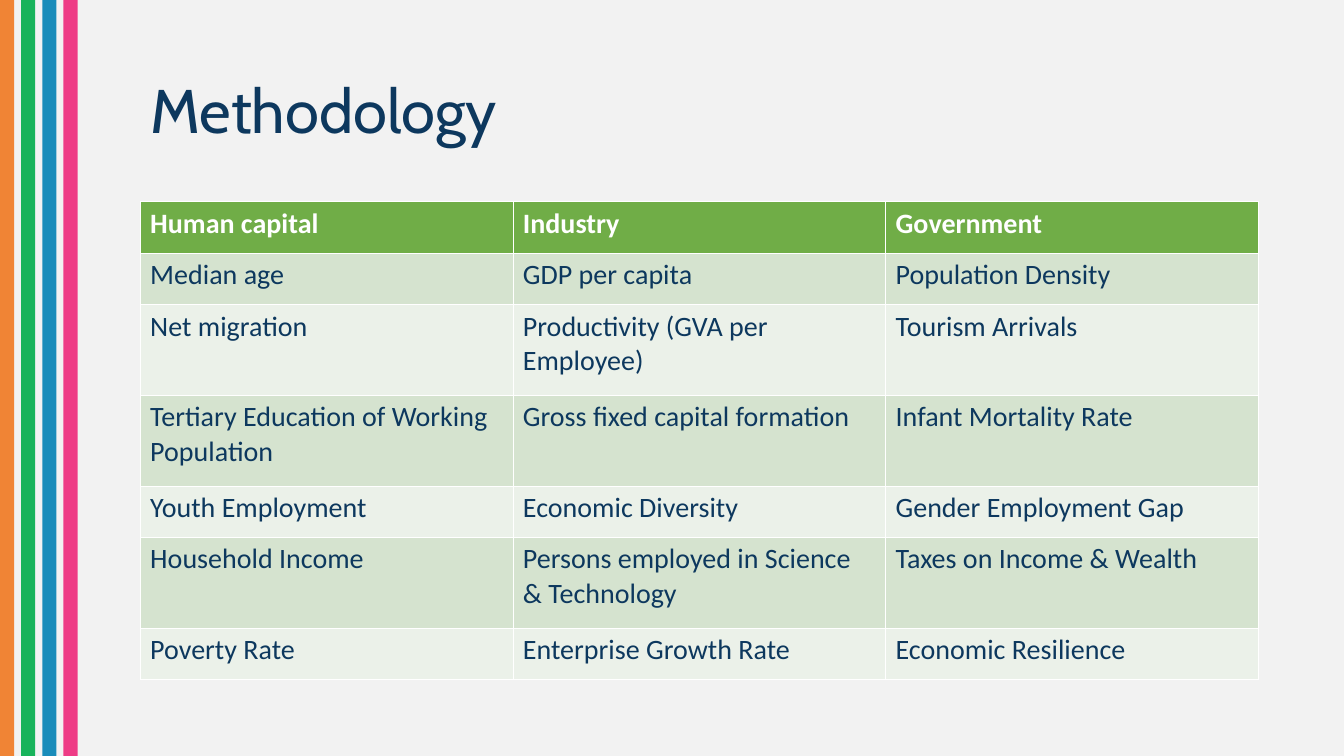
from dataclasses import dataclass

from lxml.etree import SubElement
from pptx import Presentation
from pptx.dml.color import RGBColor
from pptx.enum.shapes import MSO_SHAPE
from pptx.enum.text import MSO_ANCHOR, PP_ALIGN
from pptx.oxml.ns import qn
from pptx.util import Inches, Pt


@dataclass(frozen=True)
class Theme:
    background: str = "F2F2F2"
    ink: str = "0D385E"
    white: str = "FFFFFF"
    header: str = "70AD47"
    bands: tuple = ("D5E3CF", "EBF1E9")
    stripes: tuple = ("F07921", "01AD4B", "0281B4", "EE297B")
    stripe_opacity: int = 90
    title_font: str = "Cabin"
    body_font: str = "Calibri"
    title_size: int = 44
    body_size: int = 20
    border_width: float = 0.5


THEME = Theme()
SLIDE_WIDTH, SLIDE_HEIGHT = 13.33, 7.5
STRIPE_WIDTH, STRIPE_PITCH = 0.14, 0.21
ROW_HEIGHTS = (0.51, 0.51, 0.9, 0.9, 0.51, 0.9, 0.51)
INDICATORS = (
    ("Human capital", "Industry", "Government"),
    ("Median age", "GDP per capita", "Population Density"),
    ("Net migration", "Productivity (GVA per Employee)", "Tourism Arrivals"),
    ("Tertiary Education of Working Population", "Gross fixed capital formation", "Infant Mortality Rate"),
    ("Youth Employment", "Economic Diversity", "Gender Employment Gap"),
    ("Household Income", "Persons employed in Science & Technology", "Taxes on Income & Wealth"),
    ("Poverty Rate", "Enterprise Growth Rate", "Economic Resilience"),
)


def set_attributes(target, values):
    for name, value in values.items():
        setattr(target, name, value)


def set_fill(fill, color):
    fill.solid()
    fill.fore_color.rgb = RGBColor.from_string(color)


def format_font(font, name, size, color, bold=False):
    set_attributes(font, {"name": name, "size": Pt(size), "bold": bold})
    font.color.rgb = RGBColor.from_string(color)


def add_stripes(slide, left, top, height):
    for index, color in enumerate(THEME.stripes):
        stripe = slide.shapes.add_shape(
            MSO_SHAPE.RECTANGLE,
            Inches(left + index * STRIPE_PITCH),
            Inches(top),
            Inches(STRIPE_WIDTH),
            Inches(height),
        )
        stripe.shadow.inherit = False
        set_fill(stripe.fill, color)
        stripe.line.fill.background()
        color_element = stripe.fill._xPr.find(qn("a:solidFill"))[0]
        SubElement(color_element, qn("a:alpha"), val=str(THEME.stripe_opacity * 1000))


def place_title(slide, text, left, top, width, height):
    title = slide.shapes.title
    set_attributes(title, {
        "left": Inches(left), "top": Inches(top),
        "width": Inches(width), "height": Inches(height),
    })
    title.text_frame.text = text
    set_attributes(title.text_frame, {"vertical_anchor": MSO_ANCHOR.MIDDLE, "word_wrap": True})
    paragraph = title.text_frame.paragraphs[0]
    set_attributes(paragraph, {"alignment": PP_ALIGN.LEFT, "line_spacing": 0.9})
    format_font(paragraph.runs[0].font, THEME.title_font, THEME.title_size, THEME.ink)


def add_borders(cell):
    properties = cell._tc.get_or_add_tcPr()
    for side in ("lnL", "lnR", "lnT", "lnB"):
        border = SubElement(properties, qn(f"a:{side}"), w=str(Pt(THEME.border_width)))
        solid = SubElement(border, qn("a:solidFill"))
        SubElement(solid, qn("a:srgbClr"), val=THEME.white)


def format_cell(cell, text, row_index):
    is_header = row_index == 0
    add_borders(cell)
    set_fill(cell.fill, THEME.header if is_header else THEME.bands[(row_index - 1) % 2])
    cell.text = text
    font = cell.text_frame.paragraphs[0].runs[0].font
    color = THEME.white if is_header else THEME.ink
    format_font(font, THEME.body_font, THEME.body_size, color, is_header)


def add_indicator_table(slide, left, top, width):
    column_count = len(INDICATORS[0])
    table = slide.shapes.add_table(
        len(INDICATORS), column_count,
        Inches(left), Inches(top), Inches(width), Inches(sum(ROW_HEIGHTS)),
    ).table
    set_attributes(table, {"first_row": True, "horz_banding": False})
    for column in table.columns:
        column.width = Inches(width / column_count)
    for row_index, texts in enumerate(INDICATORS):
        table.rows[row_index].height = Inches(ROW_HEIGHTS[row_index])
        for column_index, text in enumerate(texts):
            format_cell(table.cell(row_index, column_index), text, row_index)


def build_methodology_slide(presentation):
    slide = presentation.slides.add_slide(presentation.slide_layouts[5])
    set_fill(slide.background.fill, THEME.background)
    add_stripes(slide, 0, 0, SLIDE_HEIGHT)
    place_title(slide, "Methodology", 1.39, 0.4, 8.76, 1.45)
    add_indicator_table(slide, 1.39, 2, 11.09)


def main():
    presentation = Presentation()
    set_attributes(presentation, {
        "slide_width": Inches(SLIDE_WIDTH),
        "slide_height": Inches(SLIDE_HEIGHT),
    })
    build_methodology_slide(presentation)
    presentation.save("out.pptx")


if __name__ == "__main__":
    main()
